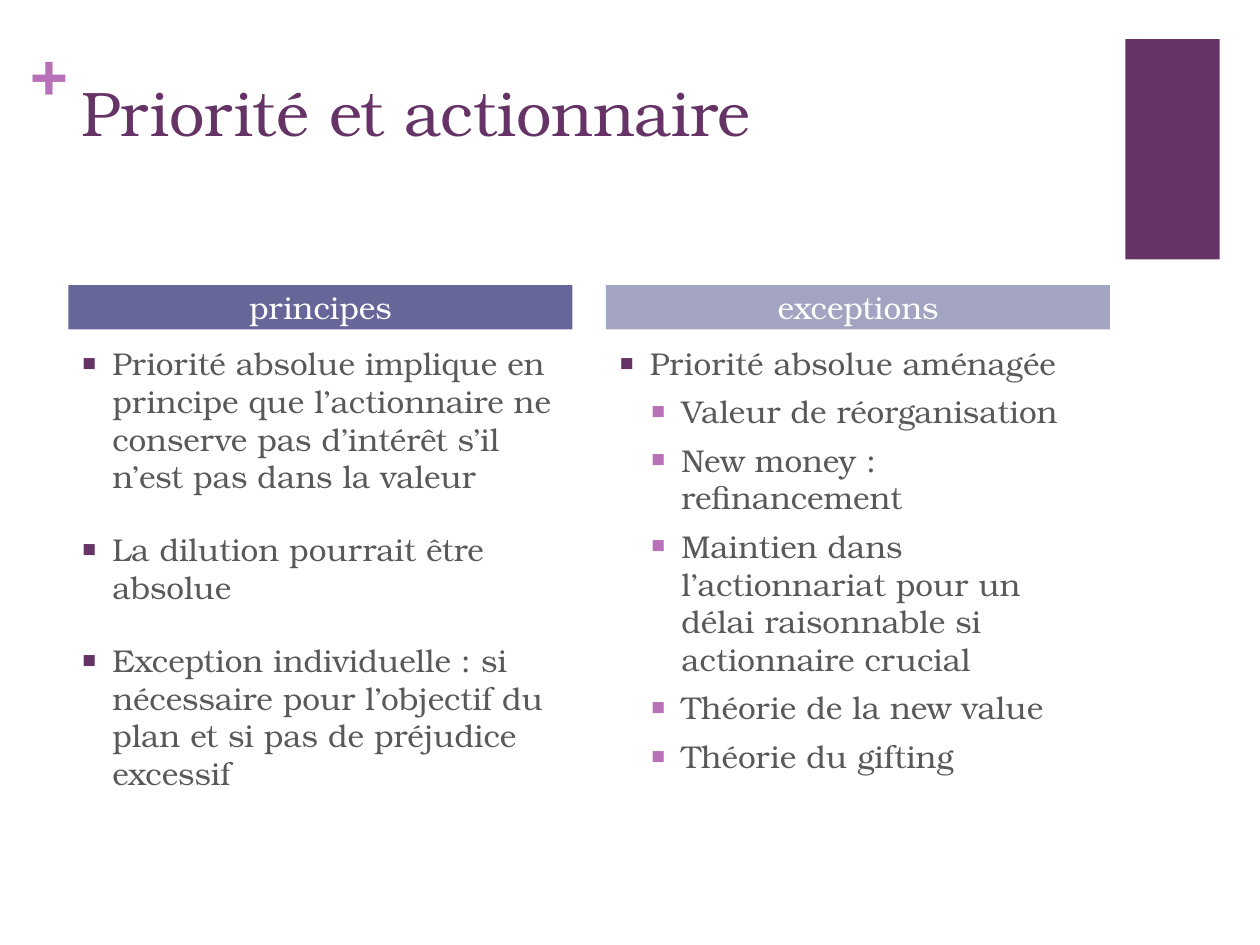
import pptx
import pptx.dml.color
import pptx.enum.shapes
import pptx.enum.text
import pptx.oxml.ns
import pptx.util
from lxml import etree

Pt = pptx.util.Pt
RGBColor = pptx.dml.color.RGBColor
ALIGN = pptx.enum.text.PP_ALIGN
ANCHOR = pptx.enum.text.MSO_ANCHOR

FONT = "TeX Gyre Bonum"
PURPLE = RGBColor(0x66, 0x33, 0x66)
ORCHID = RGBColor(0xB8, 0x70, 0xB8)
INDIGO = RGBColor(0x66, 0x66, 0x99)
LAVENDER = RGBColor(0xA3, 0xA3, 0xC2)
GREY = RGBColor(0x59, 0x59, 0x59)
WHITE = RGBColor(0xFF, 0xFF, 0xFF)

LEVELS = [(PURPLE, 20), (ORCHID, 6)]
INDENT = 18

COLUMNS = [
    ("principes", INDIGO, [
        (0, "Priorité absolue implique en principe que l’actionnaire ne conserve "
            "pas d’intérêt s’il n’est pas dans la valeur"),
        (0, "La dilution pourrait être absolue"),
        (0, "Exception individuelle : si nécessaire pour l’objectif du plan et "
            "si pas de préjudice excessif"),
    ]),
    ("exceptions", LAVENDER, [
        (0, "Priorité absolue aménagée"),
        (1, "Valeur de réorganisation"),
        (1, "New money : refinancement"),
        (1, "Maintien dans l’actionnariat pour un délai raisonnable si "
            "actionnaire crucial"),
        (1, "Théorie de la new value"),
        (1, "Théorie du gifting"),
    ]),
]


def write(paragraph, text, *, size=18, color=GREY, bold=False, align=ALIGN.LEFT):
    """Add formatted text to a paragraph."""
    paragraph.alignment = align
    run = paragraph.add_run()
    run.text = text
    run.font.name = FONT
    run.font.size = Pt(size)
    run.font.bold = bold
    run.font.color.rgb = color


def add_bullet(paragraph, level):
    """Give a paragraph the square bullet, indent and spacing of its level."""
    color, space = LEVELS[level]
    paragraph.level = level
    paragraph.space_before = Pt(space)
    properties = paragraph._p.get_or_add_pPr()
    properties.set("marL", str(Pt(INDENT * (level + 1))))
    properties.set("indent", str(-Pt(INDENT)))
    qn = pptx.oxml.ns.qn
    bullet_color = etree.SubElement(properties, qn("a:buClr"))
    etree.SubElement(bullet_color, qn("a:srgbClr"), val=str(color))
    etree.SubElement(properties, qn("a:buSzPct"), val="75000")
    etree.SubElement(properties, qn("a:buFont"), typeface=FONT)
    etree.SubElement(properties, qn("a:buChar"), char="■")


def add_text_frame(slide, left, top, width, height):
    """Add a wrapping text box and return its text frame."""
    frame = slide.shapes.add_textbox(Pt(left), Pt(top), Pt(width), Pt(height)).text_frame
    frame.word_wrap = True
    return frame


def add_block(slide, left, top, width, height, color):
    """Add a plain filled rectangle."""
    block = slide.shapes.add_shape(
        pptx.enum.shapes.MSO_SHAPE.RECTANGLE, Pt(left), Pt(top), Pt(width), Pt(height))
    block.shadow.inherit = False
    block.fill.solid()
    block.fill.fore_color.rgb = color
    block.line.fill.background()
    return block


def add_heading(slide, left, top, width, height):
    """Place the title with its plus sign and the corner block."""
    add_block(slide, left + 625.7, top, 54, 126, PURPLE)
    plus = add_text_frame(slide, left, top - 4.3, 20.2, 44)
    plus.margin_left = plus.margin_right = plus.margin_top = plus.margin_bottom = 0
    write(plus.paragraphs[0], "+", size=36, color=ORCHID, bold=True)
    title = add_text_frame(slide, left + 22.3, top + 15.9, width - 85.2, height - 38.2)
    write(title.paragraphs[0], "Priorité et actionnaire", size=36, color=PURPLE)


def add_column(slide, left, top, width, height, header, color, items):
    """Place a coloured header above its bulleted list."""
    header_height, list_offset = 25.2, 30
    band = add_block(slide, left, top, width, header_height, color).text_frame
    band.word_wrap = True
    band.margin_top = band.margin_bottom = 0
    band.vertical_anchor = ANCHOR.MIDDLE
    write(band.paragraphs[0], header, color=WHITE, align=ALIGN.CENTER)
    body = add_text_frame(slide, left, top + list_offset, width, height - list_offset)
    for index, (level, text) in enumerate(items):
        paragraph = body.add_paragraph() if index else body.paragraphs[0]
        write(paragraph, text)
        add_bullet(paragraph, level)


def main():
    """Build and save the slide."""
    deck = pptx.Presentation()
    deck.slide_width, deck.slide_height = Pt(720), Pt(540)
    slide = deck.slides.add_slide(deck.slide_layouts[6])
    add_heading(slide, 17.3, 22.3, 679.7, 126)
    column_width, gap = 288, 19.2
    for index, column in enumerate(COLUMNS):
        left = 39.1 + index * (column_width + gap)
        add_column(slide, left, 163, column_width, 319.4, *column)
    deck.save("out.pptx")


if __name__ == "__main__":
    main()
